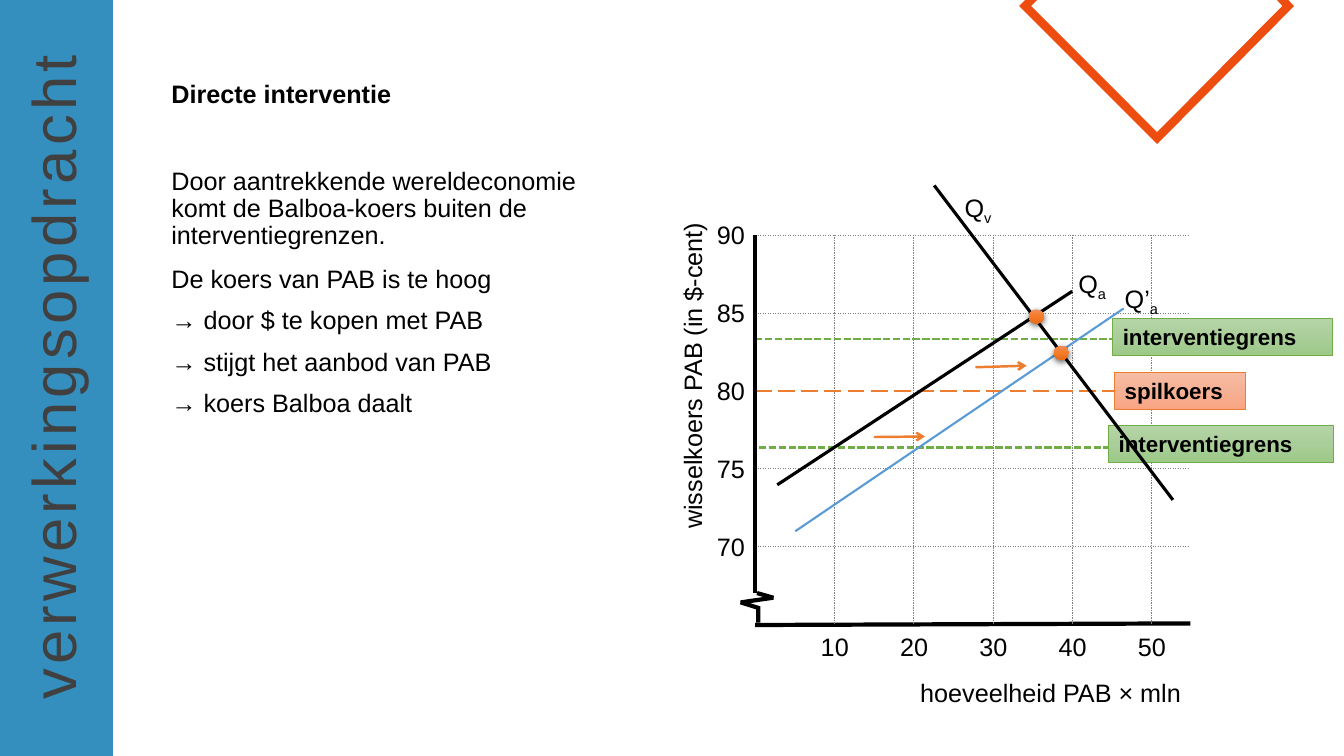
from copy import deepcopy
from dataclasses import dataclass

from pptx import Presentation
from pptx import util as u
from pptx.dml.color import RGBColor
from pptx.enum import dml, shapes, text
from pptx.oxml import parse_xml
from pptx.oxml.ns import nsdecls, qn


@dataclass(frozen=True)
class Theme:
    font: str = "Arial"
    body: int = 18
    tag: int = 16
    side: int = 44
    ink: str = "000000"
    dark: str = "404040"
    blue: str = "1A80B6"
    frame: str = "ED4D0F"
    grid: str = "808080"
    white: str = "FFFFFF"
    orange: str = "ED7D31"
    green: str = "70AD47"
    sky: str = "5B9BD5"
    peach: tuple = ("F7BDA5", "F5B196", "F8A582")
    leaf: tuple = ("B5D5A7", "AACE9A", "9CC987")
    dot: tuple = ("F18C57", "F67B28", "E56C19")


T = Theme()
W, H = u.Inches(13.333), u.Inches(7.5)
DASH = dml.MSO_LINE


# Lengths are percentages of the slide's width and height
def px(x):
    return round(W * x / 100)


def py(y):
    return round(H * y / 100)


def area(x, y, w, h):
    return px(x), py(y), px(w), py(h)


# Chart scale: quantity and rate to slide percentages
def gx(q):
    return 56.18 + 0.59 * q


def gy(rate):
    return 31.07 + 2.06 * (90 - rate)


def put(obj, **fmt):
    for key, val in fmt.items():
        setattr(obj, key, val)


def style(font, size, color, bold=False):
    put(font, name=T.font, size=u.Pt(size), bold=bold)
    font.color.rgb = RGBColor.from_string(color)


def stroke(line, color, width, dash=None):
    line.color.rgb = RGBColor.from_string(color)
    put(line, width=u.Pt(width), dash_style=dash)


def shade(fill, sp, tones):
    fill.gradient()
    fill.gradient_angle = 270
    stops = sp.spPr.find(qn("a:gradFill")).find(qn("a:gsLst"))
    stops.append(deepcopy(stops[-1]))
    for i, (stop, tone) in enumerate(zip(fill.gradient_stops, tones)):
        stop.position = i / 2
        stop.color.rgb = RGBColor.from_string(tone)


# Text elements
def write(shape, words, size=T.body, color=T.ink, bold=False, sub=""):
    para = shape.text_frame.paragraphs[0]
    para.alignment = text.PP_ALIGN.LEFT
    for part in filter(None, (words, sub)):
        run = para.add_run()
        run.text = part
        style(run.font, size, color, bold)
    if sub:
        run.font._element.set("baseline", "-25000")
    return para


def label(slide, x, y, w, words, h=5.33, turn=0, **fmt):
    box = slide.shapes.add_textbox(*area(x, y, w, h))
    box.rotation = turn
    box.text_frame.word_wrap = not turn
    return write(box, words, **fmt)


def tag(slide, x, y, w, words, tones, edge):
    box = slide.shapes.add_shape(shapes.MSO_SHAPE.RECTANGLE, *area(x, y, w, 4.93))
    box.shadow.inherit = False
    shade(box.fill, box._element, tones)
    stroke(box.line, edge, 0.5)
    put(box.text_frame, word_wrap=True, vertical_anchor=text.MSO_ANCHOR.TOP)
    write(box, words, T.tag, bold=True)


# Lines, outlines and points
def rule(slide, q1, r1, q2, r2, color, width, dash=None, arrow=False):
    ends = px(gx(q1)), py(gy(r1)), px(gx(q2)), py(gy(r2))
    line = slide.shapes.add_connector(shapes.MSO_CONNECTOR.STRAIGHT, *ends)
    stroke(line.line, color, width, dash)
    props = line._element.spPr
    if arrow:
        props.find(qn("a:ln")).append(
            parse_xml(f'<a:tailEnd {nsdecls("a")} type="arrow"/>'))
    props.append(parse_xml(f'<a:effectLst {nsdecls("a")}/>'))


def trace(slide, points, color, width, close=False):
    spots = [(px(x), py(y)) for x, y in points]
    pen = slide.shapes.build_freeform(*spots[0])
    pen.add_line_segments(spots[1:], close=close)
    form = pen.convert_to_shape()
    form.shadow.inherit = False
    form.fill.background()
    stroke(form.line, color, width)
    form._element.spPr.find(qn("a:ln")).append(
        parse_xml(f'<a:miter {nsdecls("a")} lim="800000"/>'))


def point(slide, q, rate):
    spot = area(gx(q) - 0.56, gy(rate) - 0.93, 1.12, 1.87)
    dot = slide.shapes.add_shape(shapes.MSO_SHAPE.OVAL, *spot)
    shade(dot.fill, dot._element, T.dot)
    dot.line.fill.background()
    dot._element.spPr.append(parse_xml(
        f'<a:effectLst {nsdecls("a")}><a:outerShdw blurRad="57150" dist="19050" '
        'dir="5400000"><a:srgbClr val="000000"><a:alpha val="63000"/>'
        '</a:srgbClr></a:outerShdw></a:effectLst>'))


# Slide parts
def decor(slide):
    trace(slide, [(77.25, -0.93), (94.95, -0.93), (95.85, 0.8), (86.1, 18.27),
                  (76.28, 0.8)], T.frame, 6, close=True)
    bar = slide.shapes.add_shape(shapes.MSO_SHAPE.RECTANGLE, *area(0, 0, 8.4, 100))
    bar.shadow.inherit = False
    bar.fill.solid()
    bar.fill.fore_color.rgb = RGBColor.from_string(T.blue)
    bar._element.spPr.find(qn("a:solidFill"))[0].append(
        parse_xml(f'<a:alpha {nsdecls("a")} val="88000"/>'))
    bar.line.fill.background()
    para = label(slide, -21.23, 43.6, 50.25, "verwerkingsopdracht", h=11.2,
                 turn=270, size=T.side, color=T.dark)
    para.runs[0].font._element.set("spc", "300")


def prose(slide):
    head, body = slide.placeholders
    for holder, spot in ((head, (12, 6.67, 63.08, 11.87)),
                         (body, (12, 21.6, 32.25, 74.67))):
        put(holder, **dict(zip(("left", "top", "width", "height"), area(*spot))))
        put(holder.text_frame, auto_size=text.MSO_AUTO_SIZE.NONE, word_wrap=True)
    head.text_frame.vertical_anchor = text.MSO_ANCHOR.MIDDLE
    write(head, "Directe interventie", bold=True).line_spacing = 0.9
    lines = (
        ("Door aantrekkende wereldeconomie komt de Balboa-koers buiten de "
         "interventiegrenzen.", 0),
        ("De koers van PAB is te hoog", 12),
        ("→ door $ te kopen met PAB", 10),
        ("→ stijgt het aanbod van PAB", 10),
        ("→ koers Balboa daalt", 10),
    )
    body.text_frame.text = "\n".join(words for words, _ in lines)
    for para, (_, gap) in zip(body.text_frame.paragraphs, lines):
        props = para._element.get_or_add_pPr()
        props.set("marL", "0")
        props.set("indent", "0")
        props.append(parse_xml(f'<a:buNone {nsdecls("a")}/>'))
        put(para, line_spacing=0.9, space_before=u.Pt(gap))
        style(para.runs[0].font, T.body, T.ink)


def chart(slide):
    # Grid and horizontal axis
    rule(slide, 0, 64.95, 54.9, 65.05, T.ink, 3)
    rates, sums = range(90, 69, -5), range(10, 51, 10)
    for rate in rates:
        tone = T.white if rate == 80 else T.grid
        rule(slide, 0, rate, 54.7, rate, tone, 0.25, DASH.DASH)
    for q in sums:
        rule(slide, q, 90, q, 65, T.grid, 0.25, DASH.DASH)
        label(slide, gx(q) - 1.75, 82.8, 4, str(q))
    trace(slide, [(gx(q), gy(r)) for q, r in (
        (0.25, 67), (2.3, 66.7), (-1.8, 66.4), (0.4, 66.05), (0.4, 65.1))], T.ink, 3)

    # Central rate and intervention limits
    rule(slide, 0, 80, 50.6, 80, T.orange, 1.5, DASH.LONG_DASH)
    tag(slide, 82.95, 49.2, 9.75, "spilkoers", T.peach, T.orange)
    for q, rate in ((0, 83.33), (0.5, 76.34)):
        rule(slide, q, rate, q + 48.7, rate, T.green, 1.75, DASH.SQUARE_DOT)
    for x, y, w in ((82.8, 42.13, 16.35), (82.5, 56.27, 16.73)):
        tag(slide, x, y, w, "interventiegrens", T.leaf, T.green)

    # Supply and demand curves
    for ends, tone, width in (((2.8, 73.95, 40, 86.38), T.ink, 2.25),
                              ((5.08, 70.97, 46.5, 85.28), T.sky, 1.5),
                              ((22.6, 93.17, 52.7, 72.98), T.ink, 2.25)):
        rule(slide, *ends, tone, width)
    for x, y, w, name, sub in ((82.95, 36.8, 4.5, "Q’", "a"),
                               (79.5, 34.8, 4.05, "Q", "a"),
                               (71.03, 24.8, 4, "Q", "v")):
        label(slide, x, y, w, name, sub=sub)

    # Balance points and shift arrows
    for q, rate in ((35.47, 84.76), (38.65, 82.43)):
        point(slide, q, rate)
    for ends in ((15, 77.02, 21.45, 77.05), (27.8, 81.5, 34.26, 81.6)):
        rule(slide, *ends, T.orange, 1.75, arrow=True)

    # Vertical axis and captions
    rule(slide, 0, 90, 0, 67, T.ink, 3)
    label(slide, 67.73, 88.93, 23.1, "hoeveelheid PAB × mln")
    label(slide, 39.23, 46.8, 24.53, "wisselkoers PAB (in $-cent)", turn=270)
    for rate in rates:
        label(slide, 52.6, gy(rate) - 2.67, 4, str(rate))


def main():
    deck = Presentation()
    put(deck, slide_width=W, slide_height=H)
    slide = deck.slides.add_slide(deck.slide_layouts[1])
    decor(slide)
    prose(slide)
    chart(slide)
    deck.save("out.pptx")


if __name__ == "__main__":
    main()
